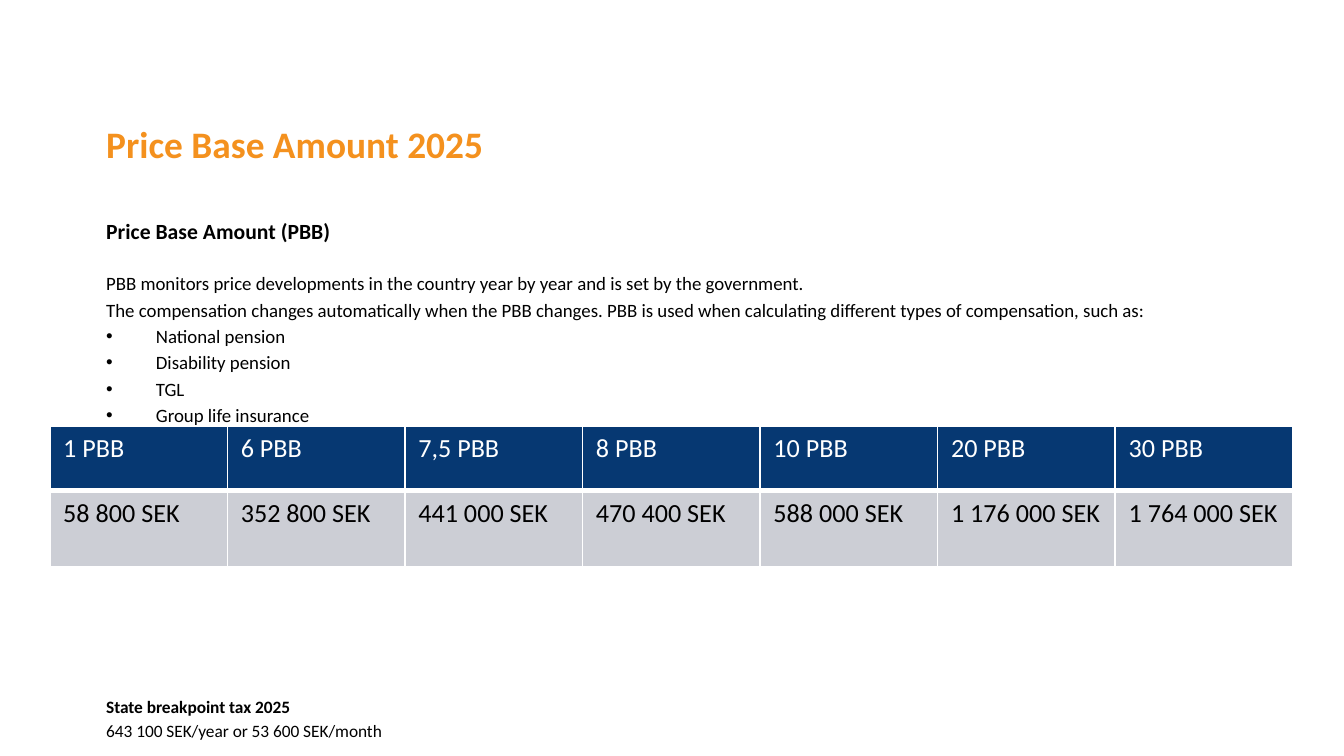
"""Build the Price Base Amount 2025 slide."""
from dataclasses import dataclass

from lxml.etree import SubElement
from pptx import Presentation
from pptx.dml.color import RGBColor
from pptx.enum.text import MSO_ANCHOR, MSO_AUTO_SIZE, PP_ALIGN
from pptx.oxml.ns import qn
from pptx.util import Inches, Pt


@dataclass(frozen=True)
class Theme:
    font: str = "Calibri"
    orange: str = "F4911E"
    navy: str = "063872"
    grey: str = "CCCED5"
    black: str = "000000"
    white: str = "FFFFFF"
    title: float = 20
    heading: float = 11.6
    body: float = 10.1
    tax: float = 9.3
    table: float = 14


@dataclass(frozen=True)
class Line:
    text: str
    size: float
    before: float = 2
    bold: bool = False
    bullet: bool = False
    continuation: str = ""


@dataclass(frozen=True)
class Amount:
    multiple: str
    value: str


THEME = Theme()
LINES = [
    Line("Price Base Amount (PBB)", THEME.heading, 0, bold=True),
    Line("PBB monitors price developments in the country year by year and is set by the government. ",
         THEME.body, 13,
         continuation="The compensation changes automatically when the PBB changes. "
         "PBB is used when calculating different types of compensation, such as:"),
    *[Line(benefit, THEME.body, bullet=True) for benefit in
      ("National pension", "Disability pension", "TGL", "Group life insurance")],
    Line("State breakpoint tax 2025", THEME.tax, 142.8, bold=True,
         continuation="643 100 SEK/year or 53 600 SEK/month"),
]
AMOUNTS = [
    Amount("1 PBB", "58 800 SEK"),
    Amount("6 PBB", "352 800 SEK"),
    Amount("7,5 PBB", "441 000 SEK"),
    Amount("8 PBB", "470 400 SEK"),
    Amount("10 PBB", "588 000 SEK"),
    Amount("20 PBB", "1 176 000 SEK"),
    Amount("30 PBB", "1 764 000 SEK"),
]


def set_font(paragraph, size: float, color: str, bold: bool = False) -> None:
    """Format a whole paragraph."""
    font = paragraph.font
    font.name, font.size, font.bold = THEME.font, Pt(size), bold
    font.color.rgb = RGBColor.from_string(color)


def place(placeholder, left: float, top: float, width: float, height: float):
    """Move a placeholder and return its top-anchored text frame."""
    placeholder.left, placeholder.top = Inches(left), Inches(top)
    placeholder.width, placeholder.height = Inches(width), Inches(height)
    frame = placeholder.text_frame
    frame.word_wrap = True
    frame.auto_size = MSO_AUTO_SIZE.NONE
    frame.vertical_anchor = MSO_ANCHOR.TOP
    return frame


def write_line(paragraph, line: Line) -> None:
    """Write one body paragraph, with its bullet or its continuation line."""
    paragraph.text = line.text
    properties = paragraph._p.get_or_add_pPr()
    indent = Inches(0.37) if line.bullet else 0
    properties.set("marL", str(indent))
    properties.set("indent", str(-indent))
    if line.bullet:
        SubElement(properties, qn("a:buChar")).set("char", "•")
    else:
        SubElement(properties, qn("a:buNone"))
    paragraph.alignment = PP_ALIGN.LEFT
    paragraph.space_before = Pt(line.before)
    set_font(paragraph, line.size, THEME.black, line.bold)
    if line.continuation:
        paragraph.line_spacing = 1.17
        paragraph.add_line_break()
        continuation = paragraph.add_run()
        continuation.text = line.continuation
        if line.bold:
            continuation.font.bold = False


def set_borders(cell, top: float, bottom: float) -> None:
    """Give a cell white borders, with the fill kept last."""
    properties = cell._tc.get_or_add_tcPr()
    widths = {"a:lnL": 1, "a:lnR": 1, "a:lnT": top, "a:lnB": bottom}
    for position, (tag, width) in enumerate(widths.items()):
        border = SubElement(properties, qn(tag), w=str(Pt(width)))
        fill = SubElement(border, qn("a:solidFill"))
        SubElement(fill, qn("a:srgbClr"), val=THEME.white)
        properties.insert(position, border)


def write_cell(cell, text: str, fill: str, color: str, top: float, bottom: float) -> None:
    """Write and style one table cell."""
    cell.text = text
    cell.fill.solid()
    cell.fill.fore_color.rgb = RGBColor.from_string(fill)
    set_font(cell.text_frame.paragraphs[0], THEME.table, color)
    set_borders(cell, top, bottom)


def add_amounts(slide, amounts: list[Amount]) -> None:
    """Add the table of base amounts."""
    table = slide.shapes.add_table(2, len(amounts), Inches(0.37), Inches(3.17),
                                   Inches(9.25), Inches(1.06)).table
    table.rows[0].height, table.rows[1].height = Inches(0.48), Inches(0.57)
    for column, amount in enumerate(amounts):
        write_cell(table.cell(0, column), amount.multiple, THEME.navy, THEME.white, 1, 3)
        write_cell(table.cell(1, column), amount.value, THEME.grey, THEME.black, 3, 1)


def main() -> None:
    """Build and save the slide."""
    presentation = Presentation()
    presentation.slide_width = Inches(10)
    presentation.slide_height = Inches(10 * 9 / 16)
    slide = presentation.slides.add_slide(presentation.slide_layouts[1])

    title = place(slide.shapes.title, 0.69, 0.85, 8.62, 0.51).paragraphs[0]
    title.text = "Price Base Amount 2025"
    title.alignment = PP_ALIGN.LEFT
    set_font(title, THEME.title, THEME.orange, bold=True)

    body = place(slide.placeholders[1], 0.69, 1.57, 8.75, 3.71)
    for index, line in enumerate(LINES):
        write_line(body.add_paragraph() if index else body.paragraphs[0], line)

    add_amounts(slide, AMOUNTS)
    presentation.save("out.pptx")


if __name__ == "__main__":
    main()
